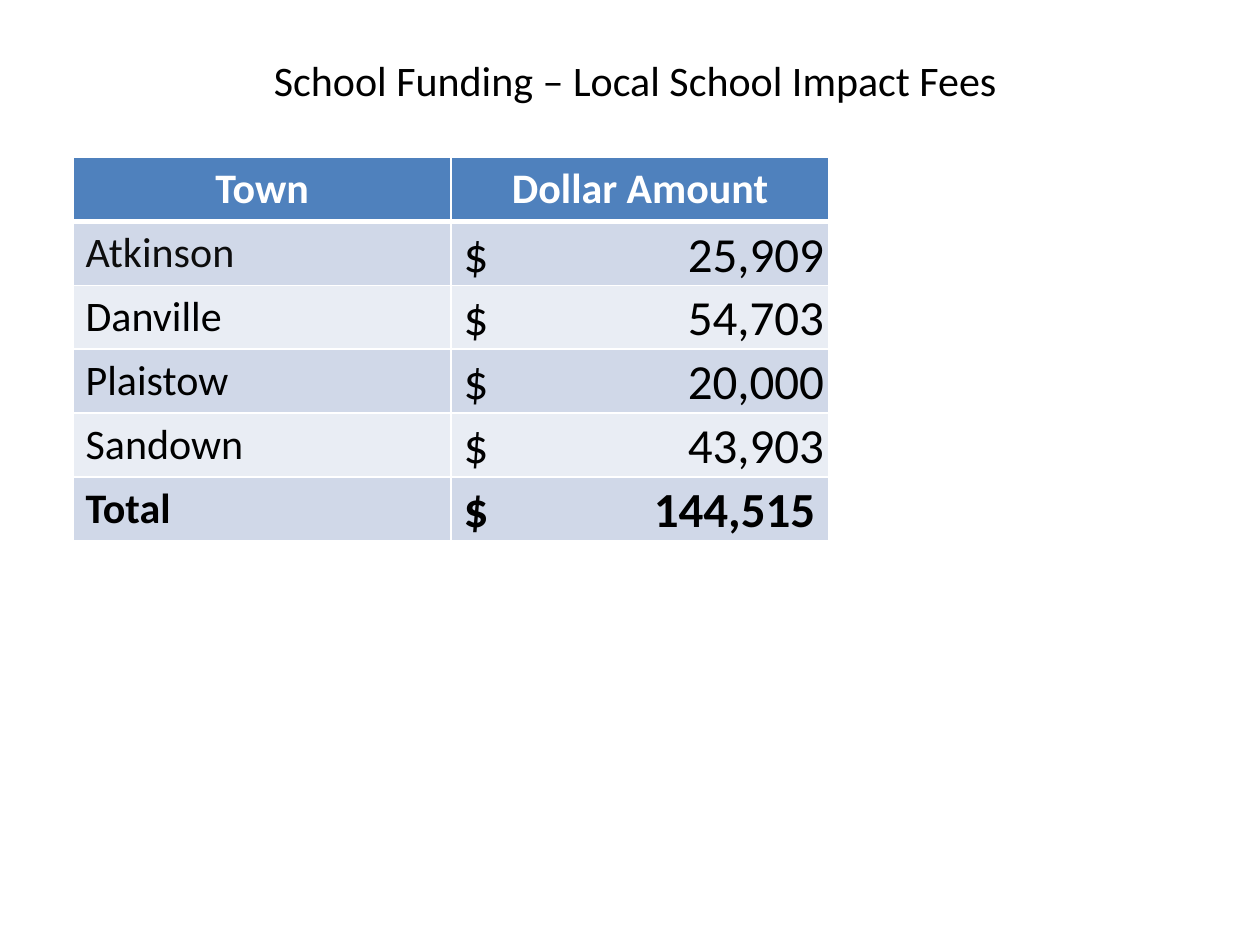
from dataclasses import dataclass

from lxml import etree
from pptx import Presentation
from pptx.dml.color import RGBColor
from pptx.enum.text import MSO_ANCHOR, PP_ALIGN
from pptx.oxml.ns import qn
from pptx.table import _Cell
from pptx.util import Inches, Pt

CENTER, LEFT = PP_ALIGN.CENTER, PP_ALIGN.LEFT
TOP, MIDDLE, BOTTOM = MSO_ANCHOR.TOP, MSO_ANCHOR.MIDDLE, MSO_ANCHOR.BOTTOM

FONT = "Calibri"
BLACK = RGBColor(0x00, 0x00, 0x00)
SOFT_BLACK = RGBColor(0x0D, 0x0D, 0x0D)
WHITE = RGBColor(0xFF, 0xFF, 0xFF)
HEADER_BLUE = RGBColor(0x4F, 0x81, 0xBD)
BANDS = (RGBColor(0xD0, 0xD8, 0xE8), RGBColor(0xE9, 0xED, 0xF4))


@dataclass
class Fee:
    town: str
    amount: str
    town_color: RGBColor = BLACK
    bold: bool = False
    amount_edge: float = 2.86


HEADINGS = ("Town", "Dollar Amount")
FEES = (
    Fee("Atkinson", "25,909", town_color=SOFT_BLACK),
    Fee("Danville", "54,703"),
    Fee("Plaistow", "20,000"),
    Fee("Sandown", "43,903"),
    Fee("Total", "144,515", bold=True, amount_edge=2.79),
)


def set_borders(cell: _Cell, bottom: float = 1, top: float = 1) -> None:
    properties = cell._tc.get_or_add_tcPr()
    for side, width in (("L", 1), ("R", 1), ("T", top), ("B", bottom)):
        line = etree.SubElement(properties, qn(f"a:ln{side}"), w=str(Pt(width)))
        fill = etree.SubElement(line, qn("a:solidFill"))
        etree.SubElement(fill, qn("a:srgbClr"), val=str(WHITE))


def add_right_tab(cell: _Cell, position: float) -> None:
    properties = cell.text_frame.paragraphs[0]._p.get_or_add_pPr()
    tabs = etree.SubElement(properties, qn("a:tabLst"))
    etree.SubElement(tabs, qn("a:tab"), pos=str(Inches(position)), algn="r")


def fill_cell(cell: _Cell, text: str, fill: RGBColor, color: RGBColor,
              size: int = 24, bold: bool = False,
              align: PP_ALIGN = LEFT, anchor: MSO_ANCHOR = TOP) -> None:
    cell.fill.solid()
    cell.fill.fore_color.rgb = fill
    cell.vertical_anchor = anchor
    cell.text_frame.text = text
    paragraph = cell.text_frame.paragraphs[0]
    paragraph.alignment = align
    font = paragraph.runs[0].font
    font.name, font.size, font.bold = FONT, Pt(size), bold
    font.color.rgb = color


def main() -> None:
    deck = Presentation()
    deck.slide_width, deck.slide_height = Inches(10), Inches(7.5)
    slide = deck.slides.add_slide(deck.slide_layouts[0])
    subtitle = slide.placeholders[1].element
    subtitle.getparent().remove(subtitle)

    title = slide.shapes.title
    title.left, title.top = Inches(0.83), Inches(0.25)
    title.width, title.height = Inches(8.5), Inches(0.77)
    title.text_frame.text = "School Funding – Local School Impact Fees "
    title.text_frame.vertical_anchor = MIDDLE
    heading = title.text_frame.paragraphs[0]
    heading.alignment = CENTER
    heading_font = heading.runs[0].font
    heading_font.name, heading_font.size = FONT, Pt(24)
    heading_font.color.rgb = BLACK

    fee_table = slide.shapes.add_table(
        len(FEES) + 1, len(HEADINGS),
        Inches(0.58), Inches(1.25), Inches(6), Inches(3)).table

    for column, label in enumerate(HEADINGS):
        cell = fee_table.cell(0, column)
        set_borders(cell, bottom=3)
        fill_cell(cell, label, HEADER_BLUE, WHITE, bold=True, align=CENTER)

    for row, fee in enumerate(FEES, start=1):
        band = BANDS[(row - 1) % 2]
        town, amount = fee_table.cell(row, 0), fee_table.cell(row, 1)
        for cell in (town, amount):
            set_borders(cell, top=3 if row == 1 else 1)
        fill_cell(town, fee.town, band, fee.town_color, bold=fee.bold)
        fill_cell(amount, f"$\t{fee.amount}", band, BLACK, size=28,
                  bold=fee.bold, anchor=BOTTOM)
        amount.margin_left = Inches(0.1)
        amount.margin_right = amount.margin_top = Inches(0.01)
        amount.margin_bottom = 0
        add_right_tab(amount, fee.amount_edge)

    deck.save("out.pptx")


if __name__ == "__main__":
    main()
